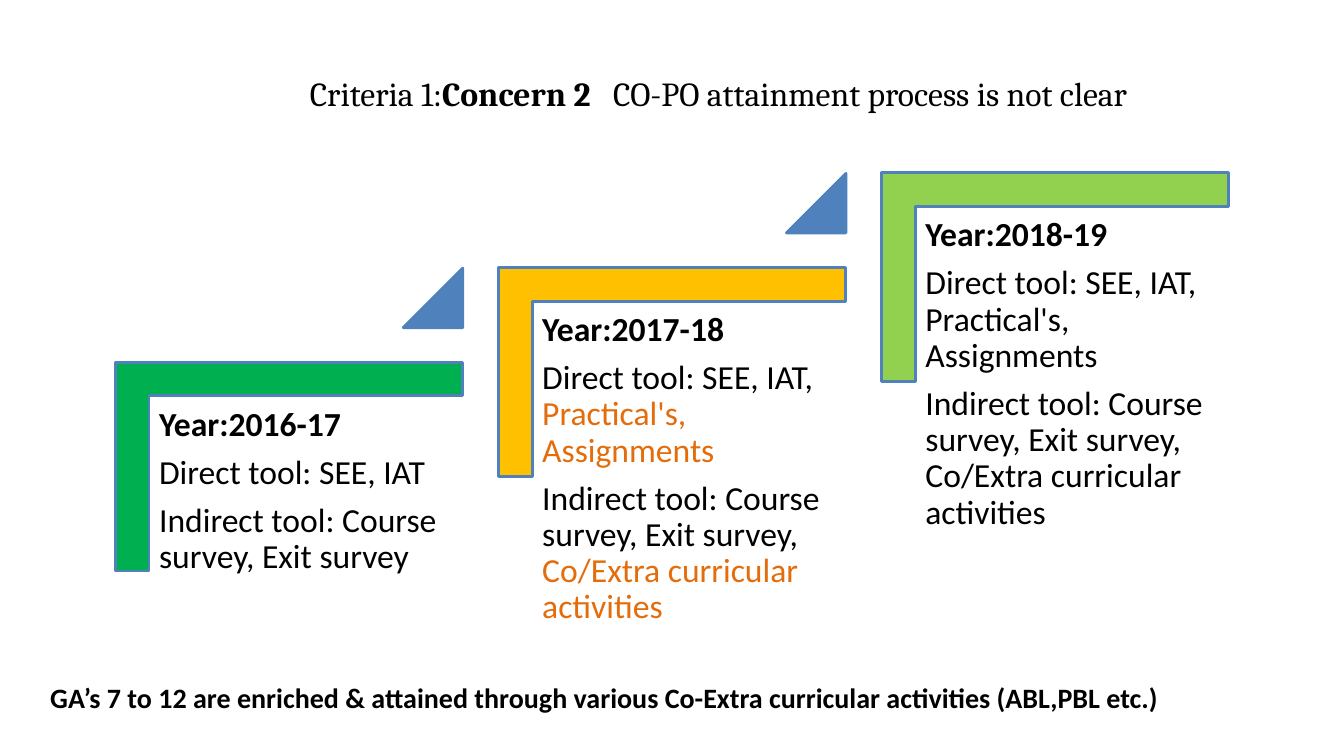
from pptx import Presentation
from pptx.dml.color import RGBColor
from pptx.enum.shapes import MSO_SHAPE
from pptx.enum.text import MSO_ANCHOR, PP_ALIGN
from pptx.util import Inches, Pt

CORNER = MSO_SHAPE.CORNER
TRIANGLE = MSO_SHAPE.ISOSCELES_TRIANGLE
MIDDLE = MSO_ANCHOR.MIDDLE
TOP = MSO_ANCHOR.TOP
CENTER = PP_ALIGN.CENTER

BLACK = "000000"
BLUE = "4F81BD"
ORANGE = "E46C0A"

STEP_LEFT, STEP_TOP = 1.48, 3.94
STEP_RIGHT, STEP_RISE = 3.8, 0.94
STEP_WIDTH, STEP_HEIGHT = 3.1, 2.72

STEPS = [
    ("00B050", [
        [("Year:2016-17", BLACK)],
        [("Direct tool: SEE, IAT", BLACK)],
        [("Indirect tool: Course survey, Exit survey", BLACK)],
    ]),
    ("FFC000", [
        [("Year:2017-18", BLACK)],
        [("Direct tool: SEE, IAT, ", BLACK), ("Practical's, Assignments", ORANGE)],
        [("Indirect tool: Course survey, Exit survey, ", BLACK),
         ("Co/Extra curricular activities", ORANGE)],
    ]),
    ("92D050", [
        [("Year:2018-19", BLACK)],
        [("Direct tool: SEE, IAT, Practical's, Assignments", BLACK)],
        [("Indirect tool: Course survey, Exit survey, Co/Extra curricular activities", BLACK)],
    ]),
]


def color(value):
    return RGBColor.from_string(value)


def apply_format(target, values):
    for name, value in values.items():
        setattr(target, name, value)


def place(shape, left, top, width, height):
    apply_format(shape, {"left": Inches(left), "top": Inches(top),
                         "width": Inches(width), "height": Inches(height)})


def add_run(paragraph, text, size, bold, font="Calibri", fill=BLACK):
    run = paragraph.add_run()
    run.text = text
    apply_format(run.font, {"name": font, "size": Pt(size), "bold": bold})
    run.font.color.rgb = color(fill)
    return run


def add_outlined_shape(shapes, kind, left, top, width, height, fill, adjustments):
    shape = shapes.add_shape(kind, Inches(left), Inches(top), Inches(width), Inches(height))
    shape.shadow.inherit = False
    shape.fill.solid()
    shape.fill.fore_color.rgb = color(fill)
    shape.line.color.rgb = color(BLUE)
    shape.line.width = Pt(2)
    for index, value in enumerate(adjustments):
        shape.adjustments[index] = value
    return shape


def add_title(slide, left, top, width, height):
    title = slide.shapes.title
    place(title, left, top, width, height)
    apply_format(title.text_frame, {"vertical_anchor": MIDDLE, "word_wrap": True,
                                    "margin_left": Inches(1.01)})
    paragraph = title.text_frame.paragraphs[0]
    paragraph.alignment = CENTER
    add_run(paragraph, "Criteria 1:", 24, False, "Cambria")
    add_run(paragraph, "Concern 2", 24, True, "Cambria")
    gap = add_run(paragraph, " ", 24, True, "Cambria")
    gap._r.get_or_add_rPr().set("spc", "1070")
    add_run(paragraph, "CO-PO attainment process is not clear", 24, False, "Cambria")


def add_step(shapes, left, top, width, height, fill, paragraphs):
    corner = add_outlined_shape(shapes, CORNER, left + 0.35, top - 1.03, 2.07, 3.44,
                                fill, [0.161, 0.161])
    corner.rotation = 90
    text_box = shapes.add_textbox(Inches(left), Inches(top), Inches(width), Inches(height))
    frame = text_box.text_frame
    margins = dict.fromkeys(
        ["margin_left", "margin_top", "margin_right", "margin_bottom"], Inches(0.1))
    apply_format(frame, {"word_wrap": True, "vertical_anchor": TOP, **margins})
    for index, runs in enumerate(paragraphs):
        paragraph = frame.add_paragraph() if index else frame.paragraphs[0]
        apply_format(paragraph, {"line_spacing": 0.9, "space_after": Pt(8.4)})
        for text, text_color in runs:
            add_run(paragraph, text, 24, index == 0, fill=text_color)


def add_staircase(slide, left, top):
    shapes = slide.shapes.add_group_shape().shapes
    for index, (fill, paragraphs) in enumerate(STEPS):
        step_left = left + index * STEP_RIGHT
        step_top = top - index * STEP_RISE
        add_step(shapes, step_left, step_top, STEP_WIDTH, STEP_HEIGHT, fill, paragraphs)
        if index < len(STEPS) - 1:
            add_outlined_shape(shapes, TRIANGLE, step_left + 2.52, step_top - 1.28,
                               0.59, 0.59, BLUE, [1])


def add_footnote(slide, left, top, width, height):
    text_box = slide.shapes.add_textbox(Inches(left), Inches(top), Inches(width), Inches(height))
    text_box.text_frame.word_wrap = True
    add_run(text_box.text_frame.paragraphs[0],
            "GA’s 7 to 12 are enriched & attained through various "
            "Co-Extra curricular activities (ABL,PBL etc.)", 20, True)


def main():
    presentation = Presentation()
    apply_format(presentation, {"slide_width": Inches(13.33), "slide_height": Inches(7.5)})
    slide = presentation.slides.add_slide(presentation.slide_layouts[5])
    add_title(slide, 0.67, 0.3, 12, 1.25)
    add_staircase(slide, STEP_LEFT, STEP_TOP)
    add_footnote(slide, 0.4, 6.7, 12.93, 0.44)
    presentation.save("out.pptx")


if __name__ == "__main__":
    main()
